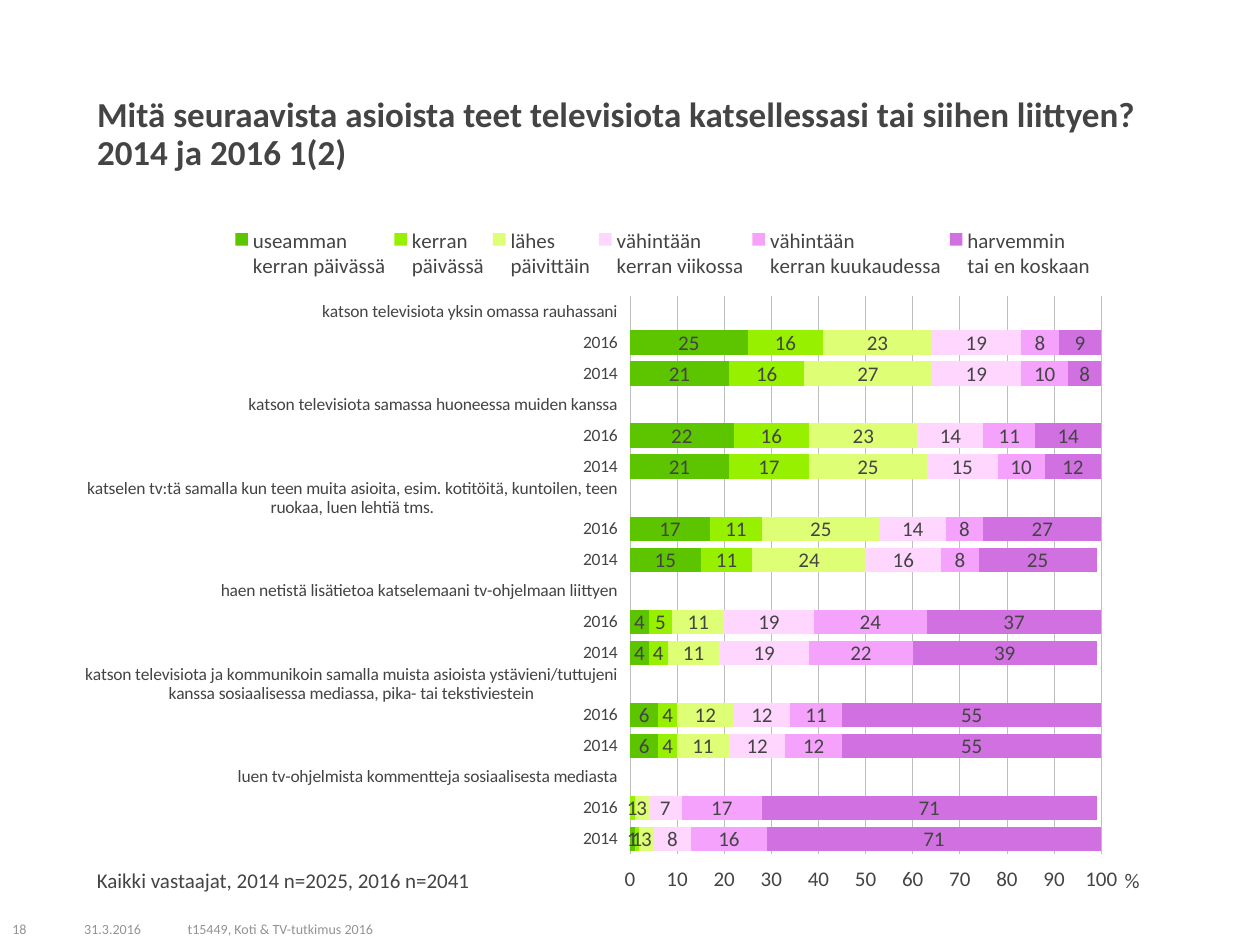
import pptx
import pptx.chart.data
import pptx.dml.color
import pptx.enum.chart
import pptx.enum.text
import pptx.oxml
import pptx.oxml.ns
import pptx.util

Inches = pptx.util.Inches
Pt = pptx.util.Pt
RGBColor = pptx.dml.color.RGBColor

FONT = "Calibri"
INK = RGBColor(0x44, 0x44, 0x44)
FOOTER_GRAY = RGBColor(0x93, 0x93, 0x93)
GRID_GRAY = RGBColor(0xBC, 0xBE, 0xC0)

HEADLINE = "Mitä seuraavista asioista teet televisiota katsellessasi tai siihen liittyen? 2014 ja 2016 1(2)"
RESPONDENTS = "Kaikki vastaajat, 2014 n=2025, 2016 n=2041"
FOOTERS = [
    ("31.3.2016", 0.57, 0.82),
    ("t15449, Koti & TV-tutkimus 2016", 1.39, 3.31),
    ("18", 0, 0.45),
]
FREQUENCIES = [
    ("useamman\nkerran päivässä", RGBColor(0x5D, 0xC4, 0x00)),
    ("kerran\npäivässä", RGBColor(0x96, 0xF0, 0x00)),
    ("lähes\npäivittäin", RGBColor(0xDE, 0xFF, 0x75)),
    ("vähintään\nkerran viikossa", RGBColor(0xFF, 0xD7, 0xFE)),
    ("vähintään\nkerran kuukaudessa", RGBColor(0xF5, 0xA2, 0xFD)),
    ("harvemmin\ntai en koskaan", RGBColor(0xD0, 0x70, 0xE1)),
]
YEARS = ("2016", "2014")
QUESTIONS = [
    ("katson televisiota yksin omassa rauhassani",
     (25, 16, 23, 19, 8, 9), (21, 16, 27, 19, 10, 8)),
    ("katson televisiota samassa huoneessa muiden kanssa",
     (22, 16, 23, 14, 11, 14), (21, 17, 25, 15, 10, 12)),
    ("katselen tv:tä samalla kun teen muita asioita, esim. kotitöitä, kuntoilen, teen ruokaa, luen lehtiä tms.",
     (17, 11, 25, 14, 8, 27), (15, 11, 24, 16, 8, 25)),
    ("haen netistä lisätietoa katselemaani tv-ohjelmaan liittyen",
     (4, 5, 11, 19, 24, 37), (4, 4, 11, 19, 22, 39)),
    ("katson televisiota ja kommunikoin samalla muista asioista ystävieni/tuttujeni kanssa "
     "sosiaalisessa mediassa, pika- tai tekstiviestein",
     (6, 4, 12, 12, 11, 55), (6, 4, 11, 12, 12, 55)),
    ("luen tv-ohjelmista kommentteja sosiaalisesta mediasta",
     (None, 1, 3, 7, 17, 71), (1, 1, 3, 8, 16, 71)),
]


def style_font(font, size, color=INK, bold=False):
    font.name = FONT
    font.size = Pt(size)
    font.bold = bold
    font.color.rgb = color


def write_line(frame, words, size, color=INK, bold=False):
    frame.word_wrap = True
    paragraph = frame.paragraphs[0]
    paragraph.alignment = pptx.enum.text.PP_ALIGN.LEFT
    run = paragraph.add_run()
    run.text = words
    style_font(run.font, size, color, bold)
    return paragraph


def place_part(element, target=None, **fractions):
    for old in element.findall(pptx.oxml.ns.qn("c:layout")):
        element.remove(old)
    settings = "".join(f'<c:{key} val="{value}"/>' for key, value in fractions.items())
    inner = f'<c:layoutTarget val="{target}"/>' if target else ""
    layout = pptx.oxml.parse_xml(
        f'<c:layout {pptx.oxml.ns.nsdecls("c")}><c:manualLayout>{inner}'
        f'<c:xMode val="edge"/><c:yMode val="edge"/>{settings}</c:manualLayout></c:layout>')
    overlay = element.find(pptx.oxml.ns.qn("c:overlay"))
    if overlay is None:
        element.insert(0, layout)
    else:
        overlay.addprevious(layout)


def add_frequency_chart(slide):
    answers = pptx.chart.data.CategoryChartData(number_format="General")
    rows = []
    for question, *shares in QUESTIONS:
        answers.add_category(question)
        rows.append((None,) * len(FREQUENCIES))
        for year, row in zip(YEARS, shares):
            answers.add_category(year)
            rows.append(row)
    for (frequency, _), column in zip(FREQUENCIES, zip(*rows)):
        answers.add_series(frequency, column)

    chart = slide.shapes.add_chart(
        pptx.enum.chart.XL_CHART_TYPE.BAR_STACKED,
        Inches(0.67), Inches(1.66), Inches(8.66), Inches(5.48), answers).chart
    style_font(chart.font, 12)
    chart.has_title = False

    plot = chart.plots[0]
    plot.gap_width = 25
    plot.overlap = 100
    plot.vary_by_categories = False
    for series, (_, color) in zip(plot.series, FREQUENCIES):
        series.format.fill.solid()
        series.format.fill.fore_color.rgb = color
        labels = series.data_labels
        labels.show_value = True
        labels.number_format = "#,##0"
        labels.number_format_is_linked = False
        labels.position = pptx.enum.chart.XL_LABEL_POSITION.CENTER
        style_font(labels.font, 12)

    questions = chart.category_axis
    shares = chart.value_axis
    for axis, size in ((questions, 10), (shares, 12)):
        axis.major_tick_mark = axis.minor_tick_mark = pptx.enum.chart.XL_TICK_MARK.NONE
        axis.format.line.fill.background()
        style_font(axis.tick_labels.font, size)
    questions.reverse_order = True
    questions.tick_label_position = pptx.enum.chart.XL_TICK_LABEL_POSITION.LOW
    shares.tick_label_position = pptx.enum.chart.XL_TICK_LABEL_POSITION.HIGH

    shares.minimum_scale = 0
    shares.maximum_scale = 100.01
    shares.major_unit = 10
    shares.tick_labels.number_format = "General"
    shares.tick_labels.number_format_is_linked = False
    shares.has_major_gridlines = True
    gridline = shares.major_gridlines.format.line
    gridline.color.rgb = GRID_GRAY
    gridline.width = Pt(0.5)
    percent = shares.axis_title
    write_line(percent.text_frame, "%", 12)

    chart.has_legend = True
    legend = chart.legend
    legend.position = pptx.enum.chart.XL_LEGEND_POSITION.TOP
    legend.include_in_layout = False
    style_font(legend.font, 12)

    place_part(chart._chartSpace.chart.plotArea, "inner", x=0.5, y=0.127, w=0.432, h=0.812)
    place_part(legend._element, x=0.13, y=0.02, w=0.8, h=0.09)
    place_part(percent._element, x=0.95, y=0.95)


def main():
    deck = pptx.Presentation()
    deck.slide_width = Inches(10)
    deck.slide_height = Inches(7.5)
    slide = deck.slides.add_slide(deck.slide_layouts[5])

    headline = slide.shapes.title
    headline.left, headline.top = Inches(0.67), Inches(0.72)
    headline.width, headline.height = Inches(8.66), Inches(0.63)
    headline.text_frame.auto_size = pptx.enum.text.MSO_AUTO_SIZE.NONE
    headline.text_frame.vertical_anchor = pptx.enum.text.MSO_ANCHOR.TOP
    write_line(headline.text_frame, HEADLINE, 20, bold=True).line_spacing = 0.9

    add_frequency_chart(slide)

    respondents = slide.shapes.add_textbox(Inches(0.67), Inches(6.86), Inches(3.19), Inches(0.28))
    write_line(respondents.text_frame, RESPONDENTS, 12).line_spacing = 0.9

    for words, left, width in FOOTERS:
        footer = slide.shapes.add_textbox(Inches(left), Inches(7.25), Inches(width), Inches(0.25))
        footer.text_frame.vertical_anchor = pptx.enum.text.MSO_ANCHOR.MIDDLE
        write_line(footer.text_frame, words, 8, FOOTER_GRAY)

    deck.save("out.pptx")


if __name__ == "__main__":
    main()
